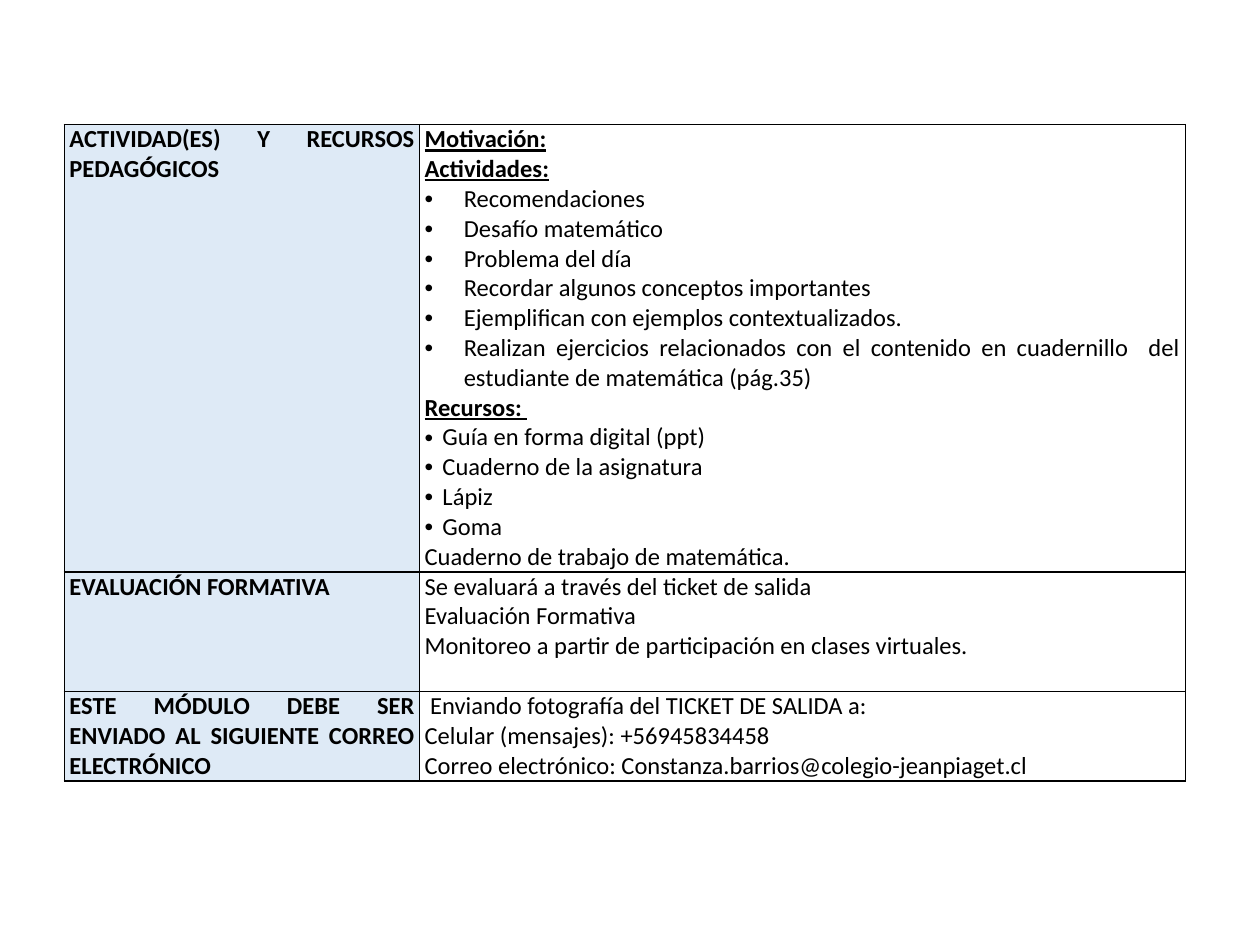
"""Build a slide with the class activities, assessment and delivery table."""
from lxml.etree import SubElement
from pptx import Presentation
from pptx.dml.color import RGBColor
from pptx.enum.text import PP_ALIGN
from pptx.oxml.ns import qn
from pptx.util import Cm, Pt

BLACK = RGBColor(0x00, 0x00, 0x00)
LIGHT_BLUE = RGBColor(0xDE, 0xEA, 0xF6)
FONT_NAME = "Calibri"
FONT_SIZE = Pt(14)
BORDER_WIDTH = Pt(1)

LABEL = {"bold": True}
HEADING = {"bold": True, "underline": True}
ACTIVITY = {"indent": Cm(0.79)}
RESOURCE = {"indent": Cm(0.36)}
PLAIN = {}

ROWS = [
    (
        Cm(9.01),
        [("ACTIVIDAD(ES) Y RECURSOS PEDAGÓGICOS", LABEL)],
        [
            ("Motivación:", HEADING),
            ("Actividades:", HEADING),
            ("Recomendaciones", ACTIVITY),
            ("Desafío matemático", ACTIVITY),
            ("Problema del día", ACTIVITY),
            ("Recordar algunos conceptos importantes", ACTIVITY),
            ("Ejemplifican con ejemplos contextualizados.", ACTIVITY),
            ("Realizan ejercicios relacionados con el contenido en cuadernillo  del "
             "estudiante de matemática (pág.35)", ACTIVITY),
            ("Recursos: ", HEADING),
            ("Guía en forma digital (ppt)", RESOURCE),
            ("Cuaderno de la asignatura", RESOURCE),
            ("Lápiz", RESOURCE),
            ("Goma", RESOURCE),
            ("Cuaderno de trabajo de matemática.", PLAIN),
        ],
    ),
    (
        Cm(2.41),
        [("EVALUACIÓN FORMATIVA", LABEL)],
        [
            ("Se evaluará a través del ticket de salida", PLAIN),
            ("Evaluación Formativa", PLAIN),
            ("Monitoreo a partir de participación en clases virtuales.", PLAIN),
        ],
    ),
    (
        Cm(1.81),
        [("ESTE MÓDULO DEBE SER ENVIADO AL SIGUIENTE CORREO ELECTRÓNICO", LABEL)],
        [
            (" Enviando fotografía del TICKET DE SALIDA a:", PLAIN),
            ("Celular (mensajes): +56945834458", PLAIN),
            ("Correo electrónico: Constanza.barrios@colegio-jeanpiaget.cl", PLAIN),
        ],
    ),
]
COLUMN_WIDTHS = [Cm(7.16), Cm(15.44)]


def write_paragraph(paragraph, text, bold=False, underline=False, indent=None):
    if indent is not None:
        properties = paragraph._p.get_or_add_pPr()
        properties.set("marL", str(indent))
        properties.set("indent", str(-indent))
        SubElement(properties, qn("a:buFont"), typeface="Arial")
        SubElement(properties, qn("a:buChar"), char="•")
    paragraph.alignment = PP_ALIGN.JUSTIFY
    run = paragraph.add_run()
    run.text = text
    run.font.name = FONT_NAME
    run.font.size = FONT_SIZE
    run.font.bold = bold
    run.font.underline = underline
    run.font.color.rgb = BLACK


def add_borders(cell):
    properties = cell._tc.get_or_add_tcPr()
    for side in ("lnL", "lnR", "lnT", "lnB"):
        line = SubElement(properties, qn(f"a:{side}"), w=str(BORDER_WIDTH))
        fill = SubElement(line, qn("a:solidFill"))
        SubElement(fill, qn("a:srgbClr"), val=str(BLACK))


def fill_cell(cell, paragraphs, color=None):
    cell.margin_left = cell.margin_right = Cm(0.1)
    cell.margin_top = cell.margin_bottom = 0
    add_borders(cell)
    if color is None:
        cell.fill.background()
    else:
        cell.fill.solid()
        cell.fill.fore_color.rgb = color
    frame = cell.text_frame
    for index, (text, style) in enumerate(paragraphs):
        paragraph = frame.add_paragraph() if index else frame.paragraphs[0]
        write_paragraph(paragraph, text, **style)


def main():
    presentation = Presentation()
    presentation.slide_width = Cm(25.4)
    presentation.slide_height = Cm(19.05)
    slide = presentation.slides.add_slide(presentation.slide_layouts[6])
    height = sum(row[0] for row in ROWS)
    table = slide.shapes.add_table(
        len(ROWS), len(COLUMN_WIDTHS), Cm(1.3), Cm(2.51), sum(COLUMN_WIDTHS), height
    ).table
    table.first_row = False
    table.horz_banding = False
    for column, width in zip(table.columns, COLUMN_WIDTHS):
        column.width = width
    for index, (row_height, label, details) in enumerate(ROWS):
        table.rows[index].height = row_height
        fill_cell(table.cell(index, 0), label, color=LIGHT_BLUE)
        fill_cell(table.cell(index, 1), details)
    presentation.save("out.pptx")


if __name__ == "__main__":
    main()
